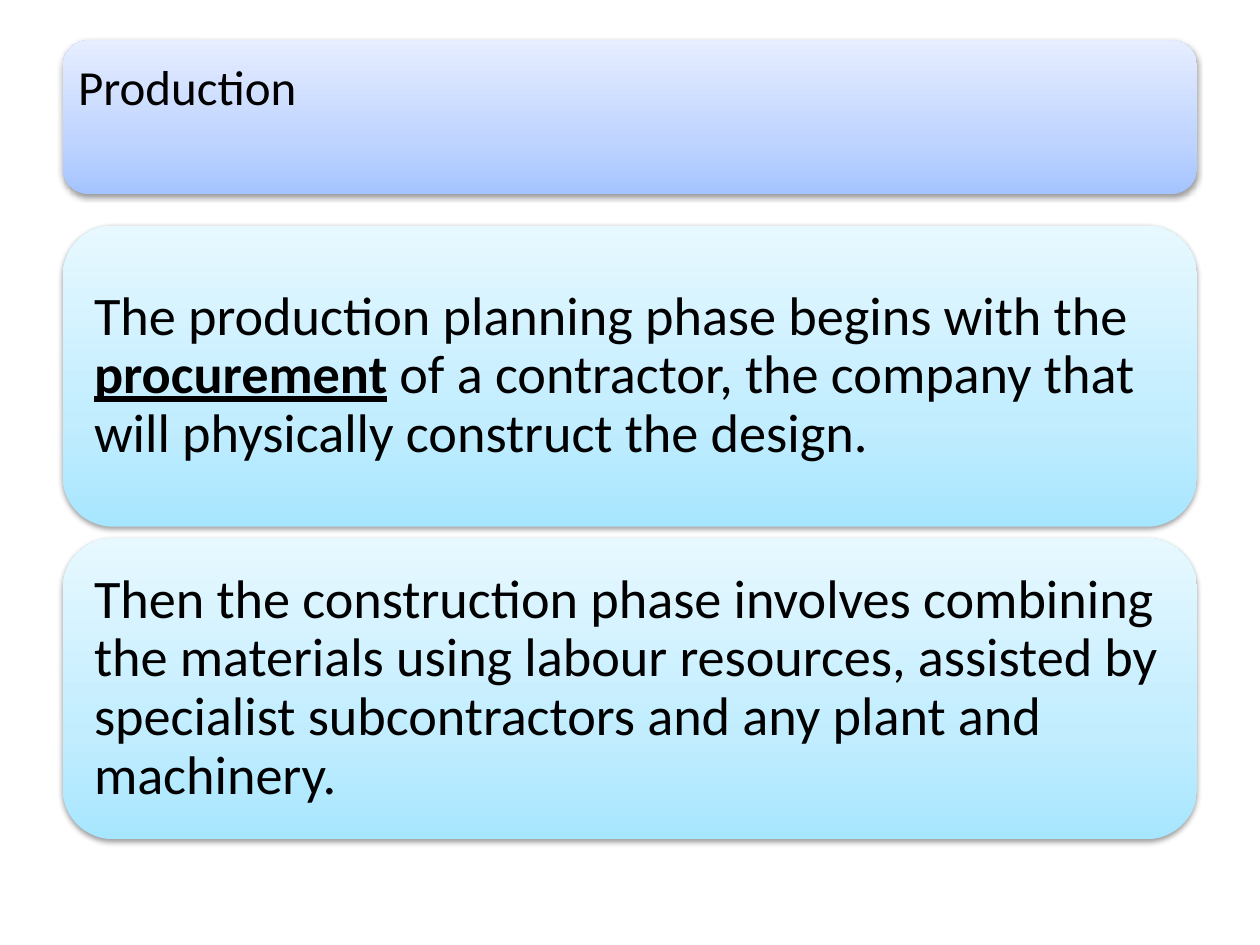
from lxml.etree import SubElement
from pptx import Presentation
from pptx.dml.color import RGBColor
from pptx.enum.shapes import MSO_SHAPE as SHAPE
from pptx.enum.text import MSO_ANCHOR as ANCHOR, PP_ALIGN as ALIGN
from pptx.oxml.ns import qn
from pptx.util import Inches, Pt

BLACK = RGBColor(0, 0, 0)
BLUES = [(0, RGBColor(0xA4, 0xC4, 0xFF)), (35, RGBColor(0xBF, 0xD4, 0xFF)),
         (100, RGBColor(0xE6, 0xEE, 0xFF))]
AQUAS = [(0, RGBColor(0xA7, 0xE6, 0xFF)), (35, RGBColor(0xC1, 0xED, 0xFF)),
         (100, RGBColor(0xE7, 0xF8, 0xFF))]

LEFT, WIDTH = 0.5, 9
TITLE_TOP, TITLE_HEIGHT = 0.32, 1.22
CARD_TOP, CARD_HEIGHT, CARD_GAP = 1.79, 2.39, 0.09

CARDS = [
    [("The production planning phase begins with the ", False),
     ("procurement", True),
     (" of a contractor, the company that will physically construct the design.", False)],
    [("Then the construction phase involves combining the materials using labour "
      "resources, assisted by specialist subcontractors and any plant and machinery.",
      False)],
]


class Deck:
    font = "Calibri"

    def __init__(self, prs):
        self.s = prs.slides.add_slide(prs.slide_layouts[5])

    def panel(self, top, height, stops):
        sp = self.s.shapes.add_shape(SHAPE.ROUNDED_RECTANGLE, Inches(LEFT), Inches(top),
                                     Inches(WIDTH), Inches(height))
        sp.line.fill.background()
        sp.shadow.inherit = False
        props = sp.element.spPr
        self.gradient(props, stops)
        self.shadow(props)
        return sp

    def gradient(self, props, stops):
        grad = SubElement(props, qn("a:gradFill"), rotWithShape="1")
        stop_list = SubElement(grad, qn("a:gsLst"))
        for pos, color in stops:
            gs = SubElement(stop_list, qn("a:gs"), pos=str(pos * 1000))
            SubElement(gs, qn("a:srgbClr"), val=str(color))
        SubElement(grad, qn("a:lin"), ang=str(270 * 60000), scaled="0")
        props.find(qn("a:prstGeom")).addnext(grad)

    def shadow(self, props):
        shade = SubElement(props.find(qn("a:effectLst")), qn("a:outerShdw"),
                           blurRad=str(Pt(3.1)), dist=str(Pt(1.6)),
                           dir=str(90 * 60000), rotWithShape="0")
        color = SubElement(shade, qn("a:srgbClr"), val=str(BLACK))
        SubElement(color, qn("a:alpha"), val="38000")

    def text(self, sp, runs, size, inset, anchor):
        tf = sp.text_frame
        tf.word_wrap = True
        tf.vertical_anchor = anchor
        tf.margin_left = tf.margin_right = Inches(inset)
        tf.margin_top = tf.margin_bottom = Inches(inset)
        p = tf.paragraphs[0]
        p.alignment = ALIGN.LEFT
        p.line_spacing = 0.9
        for words, strong in runs:
            r = p.add_run()
            r.text = words
            r.font.name = self.font
            r.font.size = Pt(size)
            r.font.color.rgb = BLACK
            r.font.bold = r.font.underline = strong

    def title(self, words):
        self.panel(TITLE_TOP, TITLE_HEIGHT, BLUES)
        sp = self.s.shapes.title
        sp.left, sp.top = Inches(LEFT), Inches(TITLE_TOP)
        sp.width, sp.height = Inches(WIDTH), Inches(TITLE_HEIGHT)
        self.s.shapes.element.append(sp.element)
        self.text(sp, [(words, False)], 28, 0.12, ANCHOR.TOP)
        sp.text_frame.margin_top = Inches(0.18)

    def card(self, top, runs):
        sp = self.panel(top, CARD_HEIGHT, AQUAS)
        self.text(sp, runs, 31, 0.13, ANCHOR.MIDDLE)


def main():
    prs = Presentation()
    prs.slide_width, prs.slide_height = Inches(10), Inches(7.5)
    deck = Deck(prs)
    deck.title("Production")
    for i, runs in enumerate(CARDS):
        deck.card(CARD_TOP + i * (CARD_HEIGHT + CARD_GAP), runs)
    prs.save("out.pptx")


if __name__ == "__main__":
    main()
